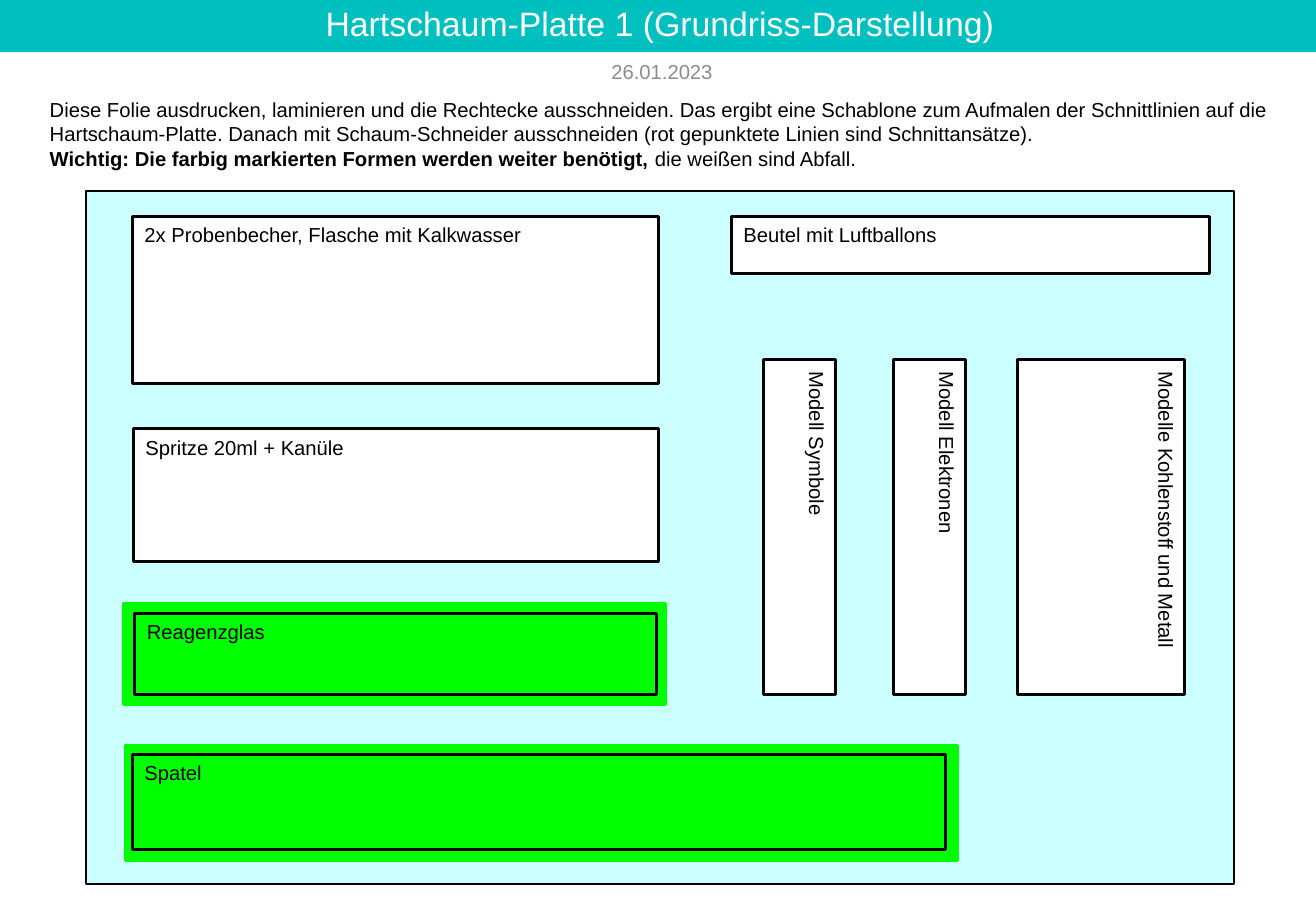
from pptx import Presentation
from pptx import util as u
from pptx.dml.color import RGBColor
from pptx.enum import shapes, text

BLACK = RGBColor(0x00, 0x00, 0x00)
WHITE = RGBColor(0xFF, 0xFF, 0xFF)
GREY = RGBColor(0x8C, 0x8C, 0x8C)
TEAL = RGBColor(0x00, 0xBF, 0xBF)
PLATE_BLUE = RGBColor(0xCC, 0xFF, 0xFF)
GREEN = RGBColor(0x00, 0xFF, 0x00)

presentation = Presentation()
presentation.slide_width = u.Cm(27.51)
presentation.slide_height = u.Cm(19.05)
slide = presentation.slides.add_slide(presentation.slide_layouts[6])


def add_rectangle(box, fill, line=None, width=1.75):
    shape = slide.shapes.add_shape(
        shapes.MSO_SHAPE.RECTANGLE, *[u.Cm(length) for length in box])
    shape.shadow.inherit = False
    shape.fill.solid()
    shape.fill.fore_color.rgb = fill
    if line is None:
        shape.line.fill.background()
    else:
        shape.line.color.rgb = line
        shape.line.width = u.Pt(width)
    return shape


def write(shape, paragraphs, size=12, color=BLACK,
          align=text.PP_ALIGN.LEFT, anchor=text.MSO_ANCHOR.TOP):
    frame = shape.text_frame
    frame.word_wrap = True
    frame.vertical_anchor = anchor
    for index, runs in enumerate(paragraphs):
        paragraph = frame.add_paragraph() if index else frame.paragraphs[0]
        paragraph.alignment = align
        for words, bold in runs:
            run = paragraph.add_run()
            run.text = words
            run.font.name = "Arial"
            run.font.size = u.Pt(size)
            run.font.bold = bold
            run.font.color.rgb = color


add_rectangle((1.8, 3.99, 24, 14.5), PLATE_BLUE, BLACK, 1)

title = add_rectangle((0, 0, 27.6, 1.09), TEAL)
write(title, [[("Hartschaum-Platte 1 (Grundriss-Darstellung)", False)]], 20, WHITE,
      text.PP_ALIGN.CENTER, text.MSO_ANCHOR.MIDDLE)
title.text_frame.paragraphs[0].line_spacing = 0.9

date = slide.shapes.add_textbox(u.Cm(12.19), u.Cm(1.09), u.Cm(3.3), u.Cm(0.79))
write(date, [[("26.01.2023", False)]], 12, GREY,
      text.PP_ALIGN.CENTER, text.MSO_ANCHOR.MIDDLE)

instructions = slide.shapes.add_textbox(u.Cm(0.79), u.Cm(1.91), u.Cm(26), u.Cm(2))
write(instructions, [
    [("Diese Folie ausdrucken, laminieren und die Rechtecke ausschneiden. "
      "Das ergibt eine Schablone zum Aufmalen der Schnittlinien auf die "
      "Hartschaum-Platte. Danach mit Schaum-Schneider ausschneiden "
      "(rot gepunktete Linien sind Schnittansätze).", False)],
    [("Wichtig: Die farbig markierten Formen werden weiter benötigt, ", True),
     ("die weißen sind Abfall.", False)],
])

for margin_box in [(2.59, 12.62, 11.33, 2.11), (2.62, 15.6, 17.4, 2.39)]:
    add_rectangle(margin_box, GREEN, GREEN)

cutouts = [
    ("2x Probenbecher, Flasche mit Kalkwasser", (2.77, 4.52, 11, 3.5), WHITE, 0),
    ("Beutel mit Luftballons", (15.29, 4.52, 10, 1.2), WHITE, 0),
    ("Spritze 20ml + Kanüle", (2.79, 8.97, 10.97, 2.77), WHITE, 0),
    ("Reagenzglas", (2.82, 12.83, 10.9, 1.7), GREEN, 0),
    ("Modelle Kohlenstoff und Metall", (19.51, 9.27, 7, 3.5), WHITE, 90),
    ("Modell Elektronen", (15.93, 10.27, 7, 1.5), WHITE, 90),
    ("Modell Symbole", (13.21, 10.27, 7, 1.5), WHITE, 90),
    ("Spatel", (2.77, 15.77, 17, 2), GREEN, 0),
]
for label, box, fill, rotation in cutouts:
    cutout = add_rectangle(box, fill, BLACK)
    cutout.rotation = rotation
    write(cutout, [[(label, False)]])

presentation.save("out.pptx")
